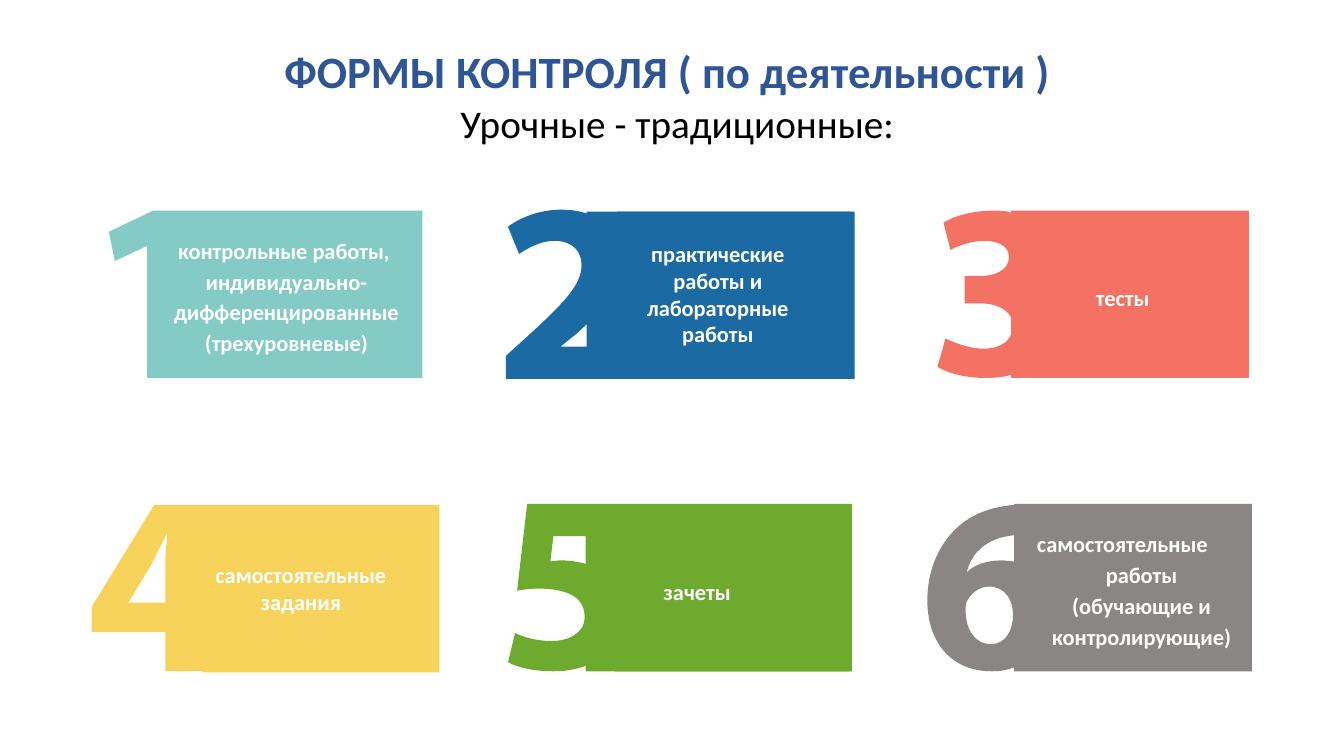
from lxml.etree import SubElement
from pptx import Presentation
from pptx.dml.color import RGBColor as RGB
from pptx.enum.shapes import MSO_SHAPE as SHAPE
from pptx.enum.text import MSO_ANCHOR as ANCHOR, MSO_AUTO_SIZE as FIT, PP_ALIGN as ALIGN
from pptx.oxml.ns import qn
from pptx.util import Pt

COLORS = {
    "title": "2F5597", "black": "000000", "white": "FFFFFF",
    "teal": "84CBC5", "blue": "1B6AA3", "coral": "F47264",
    "yellow": "F8D35C", "green": "6DAA2D", "gray": "8A8686",
}
GRID = 0.72  # points per outline unit

# Each contour lists points (x, y) and cubic curves (x1, y1, x2, y2, x, y).
ONE = [[(183, 209), (152, 209), (108, 230), (114, 259), (146, 244),
        (146, 375), (419, 375), (419, 209)]]
TWO = [
    [(848, 210), (612, 210), (612, 241), (605, 221, 587, 208, 557, 208),
     (535, 208, 516, 216, 504, 225), (515, 252), (524, 246, 536, 239, 550, 239),
     (569, 239, 577, 250, 577, 263), (577, 283, 559, 301, 523, 334),
     (502, 353), (502, 376), (848, 376)],
    [(556, 344), (572, 331), (590, 315, 606, 298, 612, 278), (612, 344)],
]
THREE = [
    [(1003, 209), (1003, 211), (998, 209, 992, 209, 985, 209),
     (964, 209, 945, 215, 936, 221), (943, 248), (950, 244, 963, 239, 977, 239),
     (993, 239, 1001, 246, 1001, 255), (1001, 269, 985, 274, 972, 274),
     (957, 274), (957, 301), (973, 301), (986, 301, 999, 306, 1003, 315),
     (1003, 332), (1000, 340, 990, 346, 976, 346), (960, 346, 945, 339, 938, 336),
     (930, 364), (940, 370, 957, 375, 978, 375), (987, 375, 996, 374, 1003, 372),
     (1003, 375), (1239, 375), (1239, 209)],
]
FOUR = [
    [(201, 501), (153, 501), (91, 602), (91, 627), (164, 627), (164, 666),
     (201, 666), (201, 667), (436, 667), (436, 501)],
    [(164, 562), (164, 598), (127, 598), (128, 597), (149, 562),
     (155, 551, 160, 541, 165, 530), (166, 530), (165, 541, 164, 552, 164, 562)],
]
FIVE = [
    [(610, 500), (523, 500), (513, 586), (519, 585, 525, 584, 534, 584),
     (567, 584, 580, 595, 580, 612), (580, 629, 563, 636, 547, 636),
     (533, 636, 518, 632, 511, 628), (504, 657), (513, 662, 529, 666, 549, 666),
     (578, 666, 599, 655, 610, 638), (610, 666), (845, 666), (845, 500)],
    [(599, 568), (588, 560, 572, 556, 556, 556), (552, 556, 549, 557, 546, 557),
     (549, 532), (610, 532), (610, 579), (607, 574, 603, 571, 599, 568)],
]
SIX = [
    [(1006, 500), (1006, 501), (983, 503, 964, 510, 949, 524),
     (931, 541, 920, 566, 920, 596), (920, 634, 941, 666, 984, 666),
     (992, 666, 1000, 665, 1006, 662), (1006, 666), (1242, 666), (1242, 500)],
    [(984, 639), (983, 639), (966, 639, 958, 623, 958, 606),
     (958, 602, 958, 599, 959, 597), (963, 589, 971, 582, 981, 582),
     (997, 582, 1005, 595, 1005, 610), (1005, 626, 997, 639, 984, 639)],
    [(994, 556), (979, 556, 967, 560, 959, 568), (963, 551, 976, 534, 1006, 531),
     (1006, 557), (1002, 557, 998, 556, 994, 556)],
]

# colour, outline, backing rectangle
CARDS = [
    ("teal", ONE, None),
    ("blue", TWO, (419, 151.2, 188.6, 119.5)),
    ("coral", THREE, None),
    ("yellow", FOUR, None),
    ("green", FIVE, (418.3, 360.7, 188.6, 118.8)),
    ("gray", SIX, None),
]
# text, box, first-line indent (None for a plain paragraph), wrap
LABELS = [
    ("контрольные работы, индивидуально-дифференцированные (трехуровневые)",
     (62.8, 162.7, 239, 95), -3.6, True),
    ("практические работы и лабораторные работы",
     (431.4, 167.8, 162.7, 85), None, True),
    ("тесты", (757.7, 196.2, 71.3, 28.1), -27.36, False),
    ("самостоятельные задания", (144.7, 397.4, 140.4, 46.1), None, True),
    ("зачеты ", (448.6, 406.8, 85, 28.1), -27.36, False),
    ("самостоятельные работы (обучающие и контролирующие)",
     (698.8, 372.2, 188.6, 95), -27.36, True),
]


def to_emu(x, y):
    return Pt(x * GRID), Pt(y * GRID)


class SlideBuilder:
    font = "Calibri"

    def __init__(self, slide):
        self.slide = slide
        self.shapes = slide.shapes

    def paint(self, sp, color):
        sp.fill.solid()
        sp.fill.fore_color.rgb = RGB.from_string(COLORS[color])
        sp.line.fill.background()
        sp.shadow.inherit = False

    def style(self, p, size, color, bold):
        p.font.name, p.font.size, p.font.bold = self.font, Pt(size), bold
        p.font.color.rgb = RGB.from_string(COLORS[color])

    def title(self, text, box):
        sp = self.shapes.title
        sp.left, sp.top, sp.width, sp.height = map(Pt, box)
        tf = sp.text_frame
        tf.text = text
        tf.vertical_anchor = ANCHOR.MIDDLE
        p = tf.paragraphs[0]
        p.alignment, p.line_spacing = ALIGN.CENTER, 0.9
        self.style(p, 32, "title", True)

    def text(self, text, box, size, color, bold=False, align=ALIGN.LEFT,
             wrap=True, spaced=True):
        tf = self.shapes.add_textbox(*map(Pt, box)).text_frame
        tf.word_wrap, tf.auto_size = wrap, FIT.SHAPE_TO_FIT_TEXT
        p = tf.paragraphs[0]
        p.text, p.alignment = text, align
        if spaced:
            p.line_spacing, p.space_after = 1.15, Pt(10)
        self.style(p, size, color, bold)
        return p

    def label(self, text, box, indent, wrap):
        p = self.text(text, box, 16, "white", True, ALIGN.CENTER, wrap, indent is not None)
        if indent is not None:
            pPr = p._p.get_or_add_pPr()
            pPr.set("marL", str(Pt(44.64)))
            pPr.set("indent", str(Pt(indent)))

    def rectangle(self, box, color):
        self.paint(self.shapes.add_shape(SHAPE.RECTANGLE, *map(Pt, box)), color)

    def outline(self, contours, color):
        """Build the contours through their end points, then bend the curved segments."""
        first, *holes = [[to_emu(*step[-2:]) for step in c] for c in contours]
        builder = self.shapes.build_freeform(*first[0])
        builder.add_line_segments(first[1:])
        for hole in holes:
            builder.move_to(*hole[0])
            builder.add_line_segments(hole[1:])
        sp = builder.convert_to_shape()
        steps = [step for c in contours for step in c[1:]]
        for line, step in zip(list(sp._element.iter(qn("a:lnTo"))), steps):
            if len(step) == 6:
                self.bend(sp, line, step)
        self.paint(sp, color)

    def bend(self, sp, line, curve):
        line.tag = qn("a:cubicBezTo")
        for pt in list(line):
            line.remove(pt)
        for i in (0, 2, 4):
            x, y = to_emu(*curve[i:i + 2])
            SubElement(line, qn("a:pt"), x=str(x - sp.left), y=str(y - sp.top))


def main():
    prs = Presentation()
    prs.slide_width, prs.slide_height = Pt(960), Pt(540)
    s = SlideBuilder(prs.slides.add_slide(prs.slide_layouts[5]))
    for color, contours, backing in CARDS:
        s.outline(contours, color)
        if backing:
            s.rectangle(backing, color)
    for label in LABELS:
        s.label(*label)
    s.title("ФОРМЫ КОНТРОЛЯ ( по деятельности ) ", (66.2, 0.7, 828, 104.4))
    s.text("Урочные - традиционные:", (321.8, 62.3, 327.6, 43.9), 28, "black", wrap=False)
    prs.save("out.pptx")


if __name__ == "__main__":
    main()
